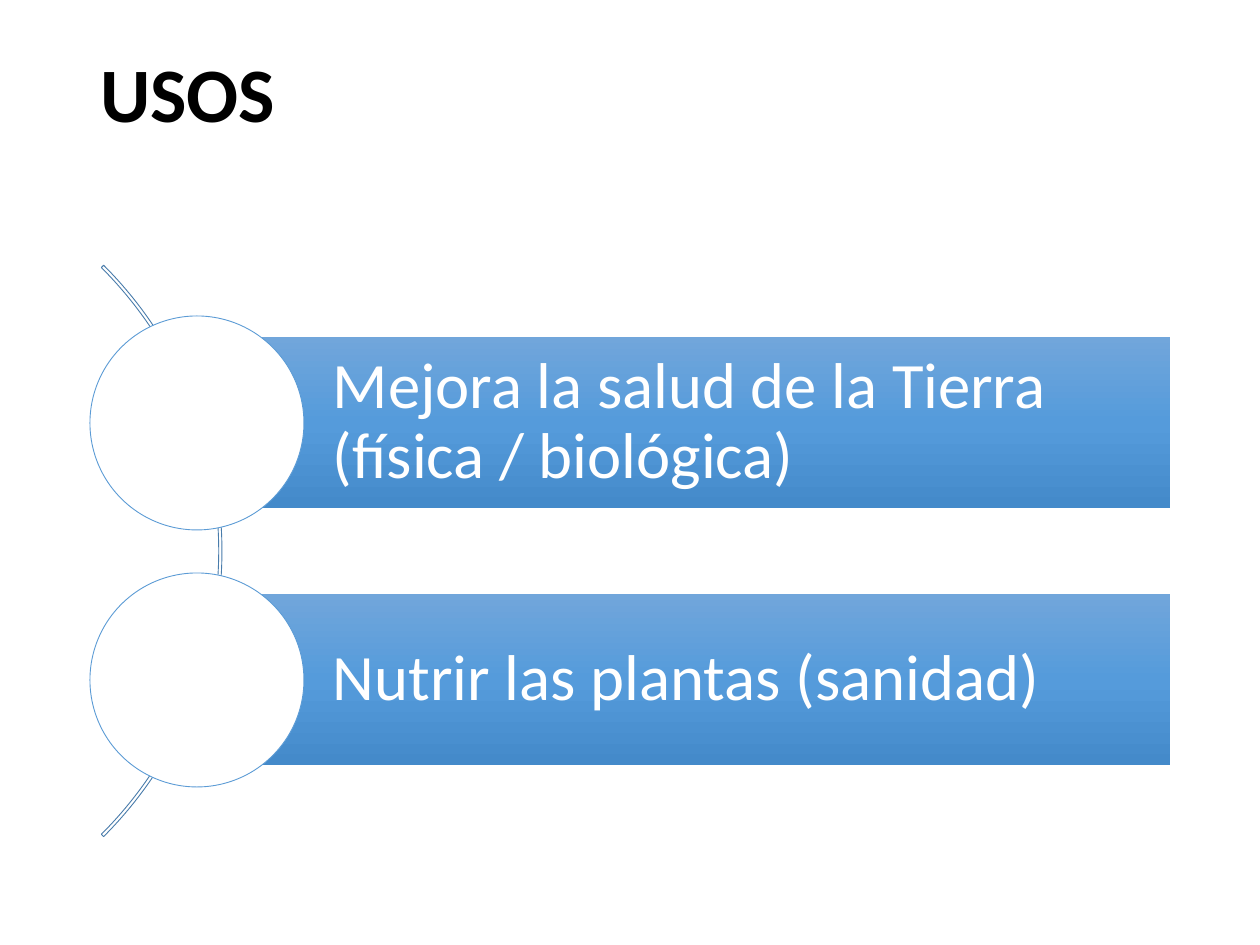
"""Build the USOS slide: two uses listed along a curved arc."""
from copy import deepcopy
from dataclasses import dataclass

from pptx import Presentation
from pptx.dml.color import RGBColor
from pptx.enum.shapes import MSO_SHAPE
from pptx.enum.text import MSO_ANCHOR, PP_ALIGN
from pptx.oxml.ns import qn
from pptx.shapes.autoshape import Shape
from pptx.shapes.shapetree import SlideShapes
from pptx.text.text import TextFrame
from pptx.util import Emu, Pt

RECTANGLE, OVAL, BLOCK_ARC = MSO_SHAPE.RECTANGLE, MSO_SHAPE.OVAL, MSO_SHAPE.BLOCK_ARC
LEFT = PP_ALIGN.LEFT
TOP, MIDDLE = MSO_ANCHOR.TOP, MSO_ANCHOR.MIDDLE

BLACK = RGBColor(0x00, 0x00, 0x00)
WHITE = RGBColor(0xFF, 0xFF, 0xFF)
ARC_LINE = RGBColor(0x49, 0x7C, 0xAB)
CIRCLE_LINE = RGBColor(0x5B, 0x9B, 0xD5)
BAR_GRADIENT = (
    RGBColor(0x71, 0xA6, 0xDB),
    RGBColor(0x55, 0x9B, 0xDB),
    RGBColor(0x44, 0x8A, 0xCA),
)
FONT = "Calibri"
EMU_PER_PX = 914400 // 126
ROW_CENTER, ROW_PITCH = 423, 257


@dataclass(frozen=True)
class Box:
    """A rectangle in px."""

    left: int
    top: int
    width: int
    height: int

    def emu(self) -> tuple[Emu, ...]:
        """Return the four lengths in EMU."""
        return tuple(px(v) for v in (self.left, self.top, self.width, self.height))


@dataclass(frozen=True)
class Use:
    """One use and the vertical centre of its row in px."""

    text: str
    center: int


def px(length: int) -> Emu:
    """Turn px into EMU."""
    return Emu(length * EMU_PER_PX)


def write(frame: TextFrame, text: str, *, size: int, color: RGBColor,
          bold: bool = False, anchor: MSO_ANCHOR = MIDDLE,
          margins: tuple[int, int, int, int] = (13, 6, 13, 6)) -> None:
    """Fill a text frame with one left-aligned formatted paragraph."""
    frame.word_wrap = True
    frame.vertical_anchor = anchor
    (frame.margin_left, frame.margin_top,
     frame.margin_right, frame.margin_bottom) = map(px, margins)
    paragraph = frame.paragraphs[0]
    paragraph.alignment = LEFT
    paragraph.line_spacing = 0.9
    run = paragraph.add_run()
    run.text = text
    run.font.name = FONT
    run.font.size = Pt(size)
    run.font.bold = bold
    run.font.color.rgb = color


def add_outline(shapes: SlideShapes, kind: MSO_SHAPE, box: Box, line: RGBColor) -> Shape:
    """Add an unfilled shape with a thin outline."""
    outline = shapes.add_shape(kind, *box.emu())
    outline.shadow.inherit = False
    outline.fill.background()
    outline.line.color.rgb = line
    outline.line.width = Pt(0.5)
    return outline


def fill_gradient(bar: Shape, colors: tuple[RGBColor, ...]) -> None:
    """Fill a shape from top to bottom with evenly spaced colours."""
    bar.fill.gradient()
    bar.fill.gradient_angle = 270
    stop_list = bar.element.spPr.find(qn("a:gradFill")).find(qn("a:gsLst"))
    while len(stop_list) < len(colors):
        stop_list.append(deepcopy(stop_list[0]))
    for index, (stop, color) in enumerate(zip(bar.fill.gradient_stops, colors)):
        stop.color.rgb = color
        stop.position = index / (len(colors) - 1)


def add_use(shapes: SlideShapes, use: Use) -> None:
    """Draw a labelled bar with its circle."""
    bar = shapes.add_shape(RECTANGLE, *Box(197, use.center - 86, 973, 171).emu())
    bar.shadow.inherit = False
    bar.line.fill.background()
    fill_gradient(bar, BAR_GRADIENT)
    write(bar.text_frame, use.text, size=37, color=WHITE, margins=(136, 12, 12, 12))
    circle = add_outline(shapes, OVAL, Box(90, use.center - 107, 214, 214), CIRCLE_LINE)
    circle.fill.solid()
    circle.fill.fore_color.rgb = WHITE


def main() -> None:
    """Build and save the slide."""
    deck = Presentation()
    deck.slide_width, deck.slide_height = px(1260), px(945)
    slide = deck.slides.add_slide(deck.slide_layouts[5])
    title = slide.shapes.title
    title.left, title.top, title.width, title.height = Box(87, 50, 1086, 183).emu()
    write(title.text_frame, "USOS", size=44, color=BLACK, bold=True, anchor=TOP)

    arc = add_outline(slide.shapes, BLOCK_ARC, Box(-586, 147, 808, 808), ARC_LINE)
    for index, value in enumerate((189, 27, 0.004)):
        arc.adjustments[index] = value

    labels = ("Mejora la salud de la Tierra (física / biológica)",
              "Nutrir las plantas (sanidad)")
    for index, label in enumerate(labels):
        add_use(slide.shapes, Use(label, ROW_CENTER + index * ROW_PITCH))
    deck.save("out.pptx")


if __name__ == "__main__":
    main()
